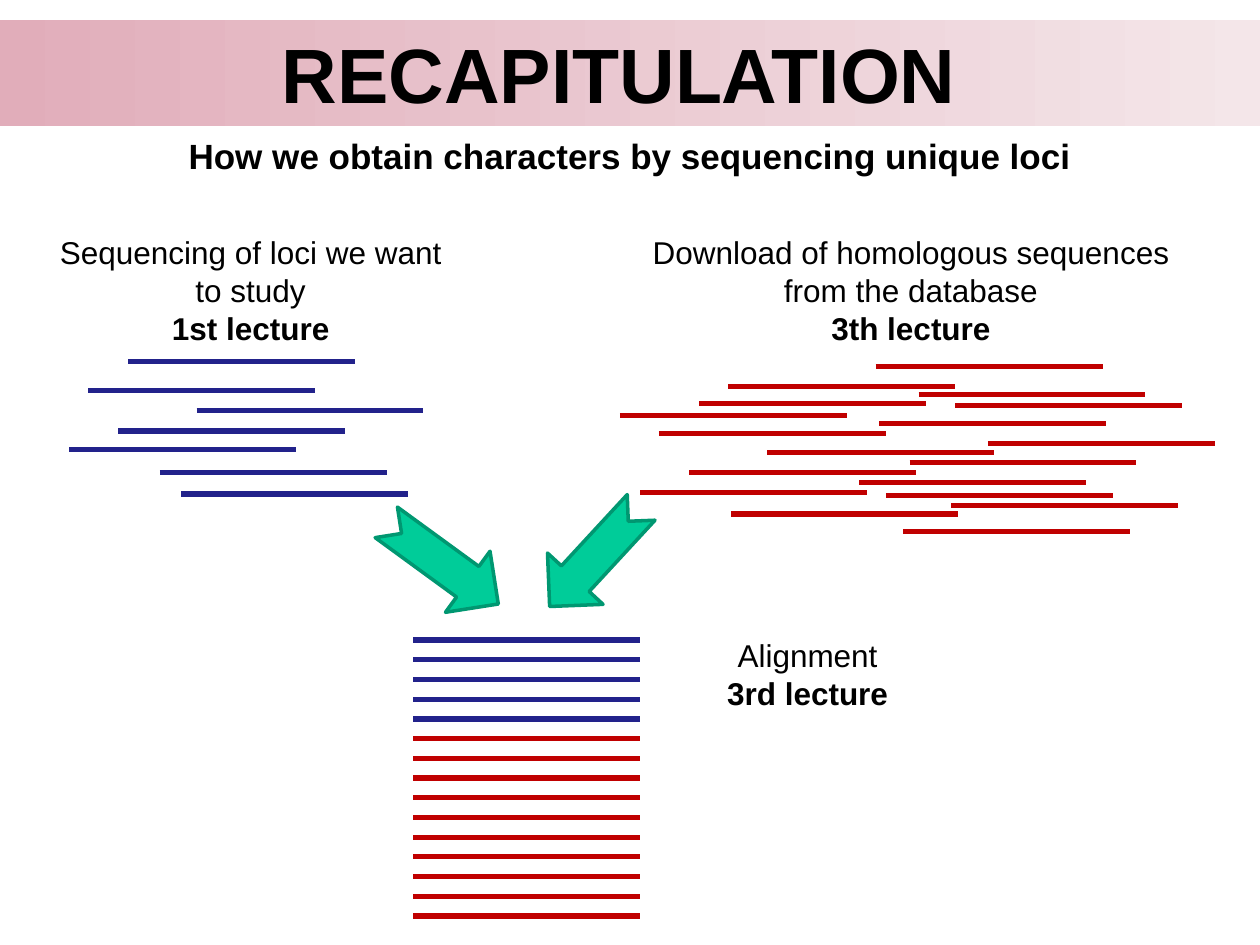
from pptx import Presentation
from pptx.dml.color import RGBColor
from pptx.enum.shapes import MSO_CONNECTOR, MSO_SHAPE
from pptx.enum.text import MSO_ANCHOR, PP_ALIGN
from pptx.oxml.ns import qn
from pptx.util import Inches, Pt
from lxml.etree import SubElement

BLUE, RED = "22228B", "C00000"
STRAND = 1.8


def color(code):
    return RGBColor.from_string(code)


class Deck:
    """Hold the text style and the current slide."""

    font = "Arial"
    ink = "000000"

    def __init__(self, slide):
        self.slide = slide

    def put_text(self, frame, lines, size, bold):
        frame.word_wrap = True
        for i, line in enumerate(lines):
            par = frame.paragraphs[0] if i == 0 else frame.add_paragraph()
            par.text = line
            par.alignment = PP_ALIGN.CENTER
            par.font.name = self.font
            par.font.size = Pt(size)
            par.font.bold = bold or i > 0
            par.font.color.rgb = color(self.ink)

    def title(self, text, box, start, end):
        shape = self.slide.shapes.title
        shape.left, shape.top, shape.width, shape.height = map(Inches, box)
        shape.fill.gradient()
        shape.fill.gradient_angle = 0
        for stop, code in zip(shape.fill.gradient_stops, (start, end)):
            stop.color.rgb = color(code)
        self.put_text(shape.text_frame, [text], 44, True)
        shape.text_frame.vertical_anchor = MSO_ANCHOR.MIDDLE

    def label(self, lines, box, size=18, bold=False):
        shape = self.slide.shapes.add_textbox(*map(Inches, box))
        self.put_text(shape.text_frame, lines, size, bold)

    def strand(self, x, y, code):
        line = self.slide.shapes.add_connector(
            MSO_CONNECTOR.STRAIGHT,
            Inches(x), Inches(y), Inches(x + STRAND), Inches(y))
        line.line.color.rgb = color(code)
        line.line.width = Pt(3)
        SubElement(line._element.spPr, qn("a:effectLst"))

    def arrow(self, box, angle):
        shape = self.slide.shapes.add_shape(
            MSO_SHAPE.NOTCHED_RIGHT_ARROW, *map(Inches, box))
        shape.rotation = angle
        shape.shadow.inherit = False
        shape.fill.solid()
        shape.fill.fore_color.rgb = color("00CC99")
        shape.line.color.rgb = color("009771")
        shape.line.width = Pt(2)


def main():
    show = Presentation()
    show.slide_width, show.slide_height = Inches(10), Inches(7.5)
    deck = Deck(show.slides.add_slide(show.slide_layouts[5]))

    deck.title("RECAPITULATION ", (0, 0.16, 10, 0.84), "E1ADBA", "F4E6E9")
    deck.label(["How we obtain characters by sequencing unique loci"],
               (0, 1.02, 10, 0.44), 20, True)
    deck.label(["Sequencing of loci we want to study", "1st lecture"],
               (0.31, 1.8, 3.36, 1.01))
    deck.label(["Download of homologous sequences from the database",
                "3th lecture"], (5.08, 1.8, 4.3, 1.01))
    deck.label(["Alignment", "3rd lecture"], (5.08, 5, 2.66, 0.71))

    own = [(1.02, 2.87), (0.7, 3.1), (1.56, 3.26), (0.94, 3.42),
           (0.55, 3.57), (1.27, 3.75), (1.44, 3.92)]
    found = [(6.95, 2.91), (5.78, 3.07), (7.29, 3.13), (5.55, 3.2),
             (7.58, 3.22), (4.92, 3.3), (6.98, 3.36), (5.23, 3.44),
             (7.84, 3.52), (6.09, 3.59), (7.22, 3.67), (5.47, 3.75),
             (6.82, 3.83), (5.08, 3.91), (7.03, 3.93), (7.55, 4.01),
             (5.8, 4.08), (7.17, 4.22)]
    for spots, code in ((own, BLUE), (found, RED)):
        for x, y in spots:
            deck.strand(x, y, code)

    top, low, rows = 5.08, 7.27, 15
    for i in range(rows):
        y = top + i * (low - top) / (rows - 1)
        deck.strand(3.28, y, BLUE if i < 5 else RED)

    deck.arrow((2.96, 4.17, 1.1, 0.6), 36.1)
    deck.arrow((4.19, 4.12, 1.07, 0.6), 132.7)
    show.save("out.pptx")


if __name__ == "__main__":
    main()
